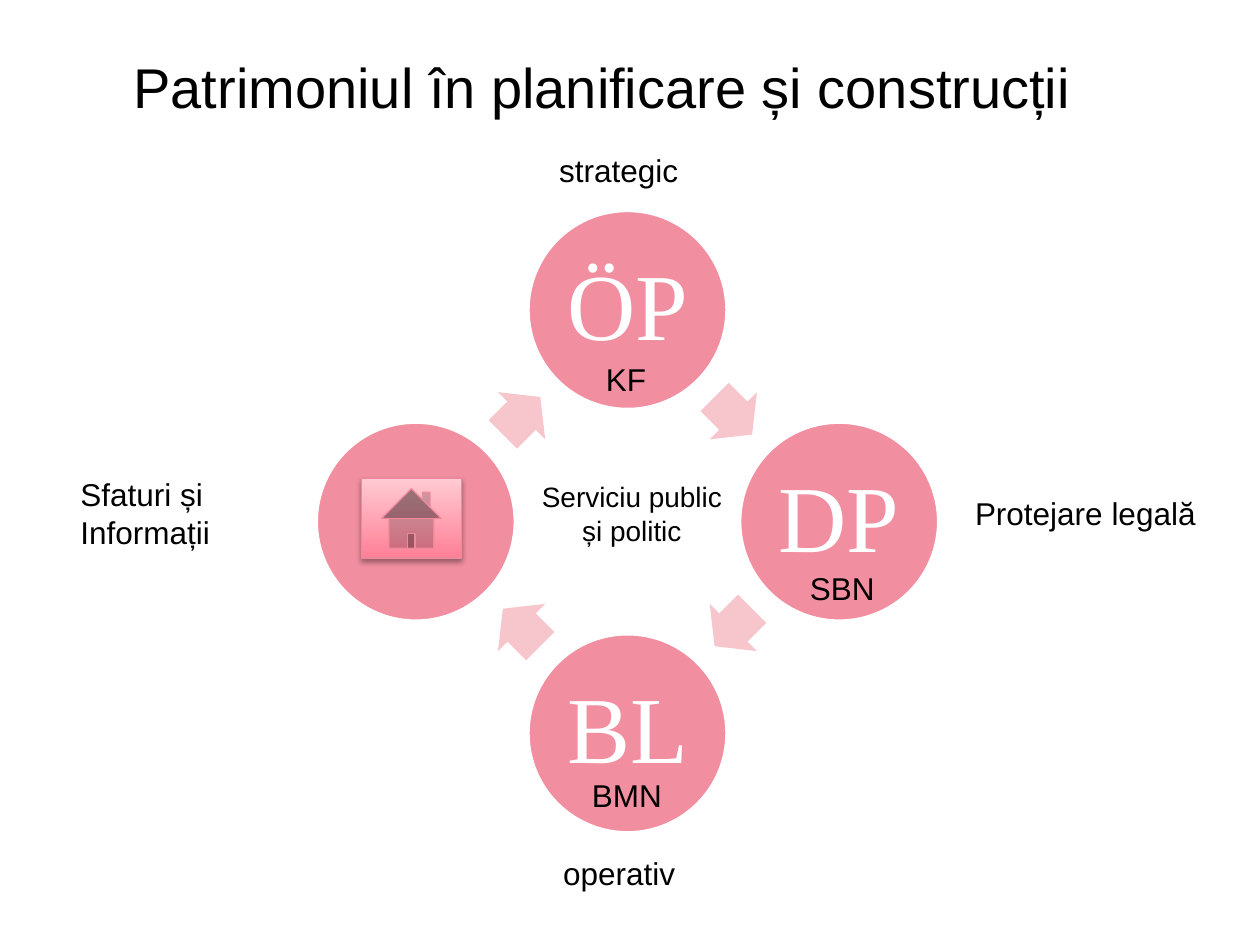
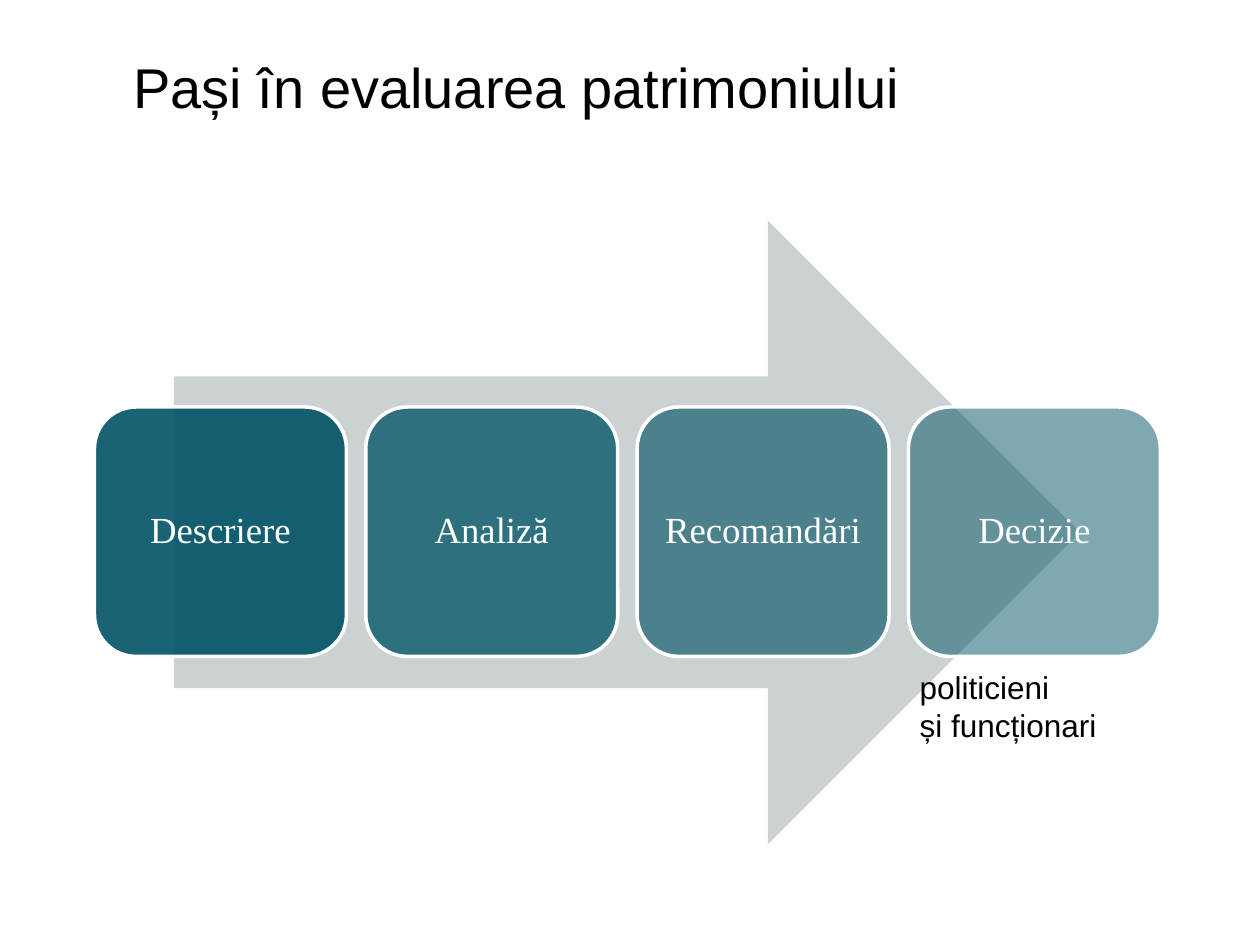
import math
from dataclasses import dataclass

from lxml import etree
from pptx import Presentation
from pptx import util as u
from pptx.dml.color import RGBColor
from pptx.enum import shapes, text
from pptx.oxml.ns import qn


@dataclass(frozen=True)
class Theme:
    black: str = "000000"
    white: str = "FFFFFF"
    pink: str = "F18EA0"
    pale_pink: str = "F7C6CD"
    home_bottom: str = "FF8097"
    home_top: str = "FFCAD2"
    home_line: str = "EE889B"
    teal: str = "005365"
    grey: str = "CCD1D3"
    sans: str = "Arial"
    serif: str = "Times New Roman"
    title_size: int = 32
    circle_size: int = 54
    step_size: int = 21
    label_size: int = 18
    centre_size: int = 16


THEME = Theme()

CYCLE_TITLE = "Patrimoniul în planificare și construcții"
CYCLE_STAGES = ["ÖP", "DP", "BL", ""]
CYCLE_LABELS = [
    ("Sfaturi și\nInformații", 0.54, 3.72, 1.24, 0.71),
    ("Protejare legală", 7.64, 3.87, 1.97, 0.4),
    ("operativ", 4.37, 6.73, 1.11, 0.4),
    ("strategic", 4.34, 1.15, 1.16, 0.4),
    ("KF", 4.71, 2.81, 0.52, 0.4),
    ("SBN", 6.33, 4.47, 0.72, 0.4),
    ("BMN", 4.6, 6.11, 0.76, 0.4),
]
CYCLE_CENTRE_LABEL = ("Serviciu public\nși politic", 4.19, 3.76, 1.65, 0.64)
CYCLE_CENTRE = (4.98, 4.14)
CYCLE_RADIUS = 1.68
CIRCLE_SIZE = 1.58
ARROW_WIDTH, ARROW_HEIGHT = 0.42, 0.53

STEPS_TITLE = "Pași în evaluarea patrimoniului"
STEPS = ["Descriere", "Analiză", "Recomandări", "Decizie"]
STEPS_LABEL = ("politicieni\nși funcționari", 7.2, 5.25, 1.62, 0.71)
FIRST_STEP, LAST_STEP = 0.75, 7.21
FIRST_OPACITY, LAST_OPACITY = 90, 50


def inches(*lengths):
    return [u.Inches(length) for length in lengths]


def format_text(frame, font, size, color, align=text.PP_ALIGN.LEFT):
    for para in frame.paragraphs:
        para.alignment = align
        for span in para.runs:
            span.font.name = font
            span.font.size = u.Pt(size)
            span.font.color.rgb = RGBColor.from_string(color)


def set_insets(frame, inset):
    frame.margin_left = frame.margin_right = u.Inches(inset)
    frame.margin_top = frame.margin_bottom = u.Inches(inset)


def add_page(deck, title):
    page = deck.slides.add_slide(deck.slide_layouts[5])
    box = page.shapes.title
    box.left, box.top, box.width, box.height = inches(1.06, 0.42, 7.84, 1.25)
    frame = box.text_frame
    frame.text = title
    frame.auto_size = text.MSO_AUTO_SIZE.NONE
    frame.vertical_anchor = text.MSO_ANCHOR.TOP
    set_insets(frame, 0)
    format_text(frame, THEME.sans, THEME.title_size, THEME.black)
    return page


def add_label(page, label, size=THEME.label_size, align=text.PP_ALIGN.LEFT):
    words, *place = label
    frame = page.shapes.add_textbox(*inches(*place)).text_frame
    frame.text = words
    frame.word_wrap = False
    frame.auto_size = text.MSO_AUTO_SIZE.SHAPE_TO_FIT_TEXT
    format_text(frame, THEME.sans, size, THEME.black, align)


def add_figure(page, kind, place, fill, line=None, line_width=2):
    figure = page.shapes.add_shape(kind, *inches(*place))
    figure.shadow.inherit = False
    figure.fill.solid()
    figure.fill.fore_color.rgb = RGBColor.from_string(fill)
    if line:
        figure.line.color.rgb = RGBColor.from_string(line)
        figure.line.width = u.Pt(line_width)
    else:
        figure.line.fill.background()
    return figure


def write_inside(figure, words, size, inset):
    frame = figure.text_frame
    frame.text = words
    frame.word_wrap = True
    frame.vertical_anchor = text.MSO_ANCHOR.MIDDLE
    set_insets(frame, inset)
    frame.paragraphs[0].line_spacing = 0.9
    format_text(frame, THEME.serif, size, THEME.white, text.PP_ALIGN.CENTER)


def set_alpha(color_element, percent):
    etree.SubElement(color_element, qn("a:alpha"), val=str(percent * 1000))


def add_home_button(page):
    home = add_figure(page, shapes.MSO_SHAPE.ACTION_BUTTON_HOME,
                      (2.87, 3.8, 0.79, 0.63), THEME.pink, THEME.home_line, 0.75)
    home.fill.gradient()
    home.fill.gradient_angle = 90
    for stop, color in zip(home.fill.gradient_stops, (THEME.home_bottom, THEME.home_top)):
        stop.color.rgb = RGBColor.from_string(color)
    effects = home.element.spPr.find(qn("a:effectLst"))
    shadow = etree.SubElement(effects, qn("a:outerShdw"), blurRad=str(u.Pt(3.1)),
                              dist=str(u.Pt(1.8)), dir="5400000", rotWithShape="0")
    set_alpha(etree.SubElement(shadow, qn("a:srgbClr"), val=THEME.black), 35)


def build_cycle(deck):
    page = add_page(deck, CYCLE_TITLE)
    centre_x, centre_y = CYCLE_CENTRE
    turn = 360 / len(CYCLE_STAGES)
    arrow_radius = CYCLE_RADIUS * math.cos(math.radians(turn / 2))

    def place_at(angle, radius, width, height):
        x = centre_x + radius * math.sin(math.radians(angle))
        y = centre_y - radius * math.cos(math.radians(angle))
        return x - width / 2, y - height / 2, width, height

    for index, stage in enumerate(CYCLE_STAGES):
        angle = index * turn
        circle = add_figure(page, shapes.MSO_SHAPE.OVAL,
                            place_at(angle, CYCLE_RADIUS, CIRCLE_SIZE, CIRCLE_SIZE),
                            THEME.pink, THEME.white)
        if stage:
            write_inside(circle, stage, THEME.circle_size, 0.07)
        middle = angle + turn / 2
        arrow = add_figure(page, shapes.MSO_SHAPE.RIGHT_ARROW,
                           place_at(middle, arrow_radius, ARROW_WIDTH, ARROW_HEIGHT),
                           THEME.pale_pink)
        arrow.adjustments[0] = 0.6
        arrow.adjustments[1] = 0.5
        arrow.rotation = middle

    add_home_button(page)
    for label in CYCLE_LABELS:
        add_label(page, label)
    add_label(page, CYCLE_CENTRE_LABEL, THEME.centre_size, text.PP_ALIGN.CENTER)


def build_steps(deck):
    page = add_page(deck, STEPS_TITLE)
    add_figure(page, shapes.MSO_SHAPE.RIGHT_ARROW, (1.38, 1.75, 7.19, 4.95), THEME.grey)
    for index, step in enumerate(STEPS):
        share = index / (len(STEPS) - 1)
        left = FIRST_STEP + share * (LAST_STEP - FIRST_STEP)
        tile = add_figure(page, shapes.MSO_SHAPE.ROUNDED_RECTANGLE,
                          (left, 3.23, 2, 1.98), THEME.teal, THEME.white)
        opacity = round(FIRST_OPACITY + share * (LAST_OPACITY - FIRST_OPACITY))
        set_alpha(tile.element.spPr.find(qn("a:solidFill"))[0], opacity)
        write_inside(tile, step, THEME.step_size, 0.09)
    add_label(page, STEPS_LABEL)


def main():
    deck = Presentation()
    deck.slide_width, deck.slide_height = inches(10, 7.5)
    build_cycle(deck)
    build_steps(deck)
    deck.save("out.pptx")


if __name__ == "__main__":
    main()
